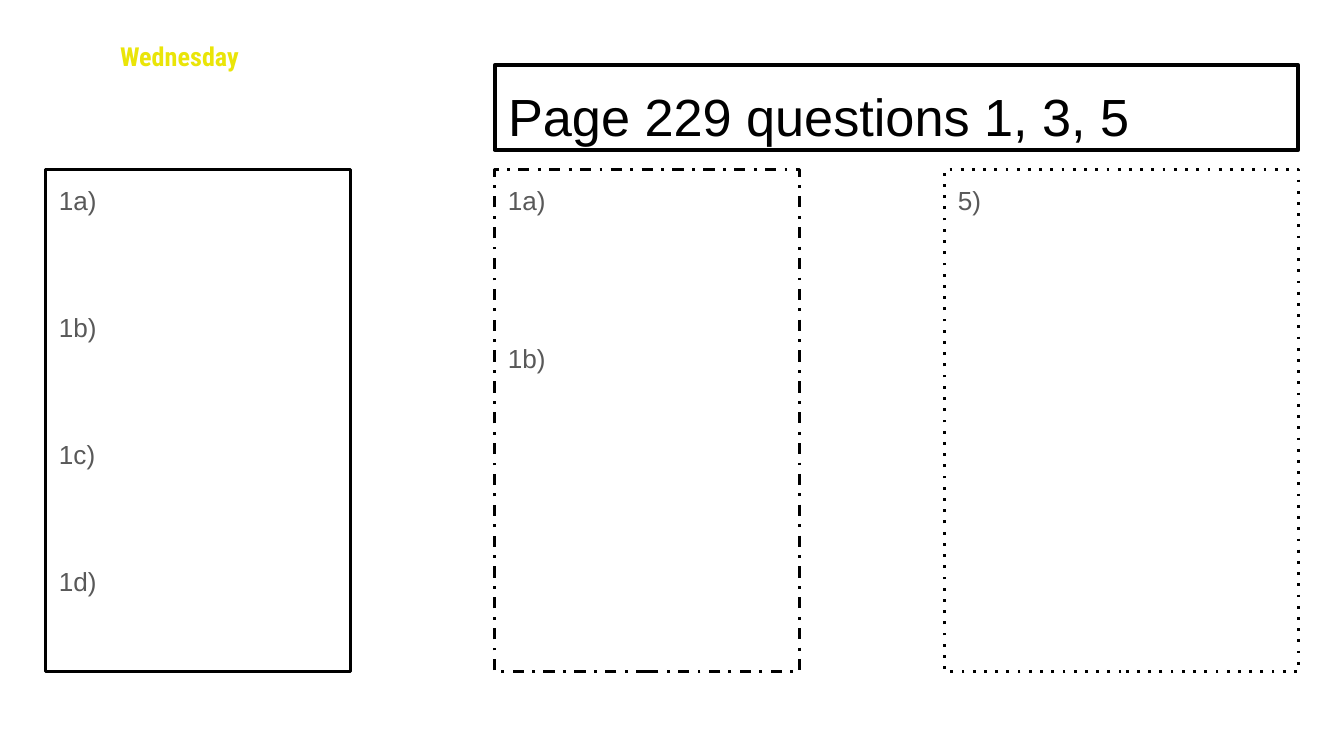
from dataclasses import dataclass

from lxml import etree
from pptx import Presentation
from pptx.dml.color import RGBColor
from pptx.enum.dml import MSO_LINE
from pptx.enum.shapes import MSO_SHAPE
from pptx.enum.text import MSO_ANCHOR, MSO_AUTO_SIZE, PP_ALIGN
from pptx.oxml.ns import qn
from pptx.util import Pt

RECT = MSO_SHAPE.RECTANGLE
SOLID = MSO_LINE.SOLID
TOP = MSO_ANCHOR.TOP
FIXED = MSO_AUTO_SIZE.NONE
LEFT, CENTER = PP_ALIGN.LEFT, PP_ALIGN.CENTER


@dataclass(frozen=True)
class Theme:
    font: str = "Arial"
    day_font: str = "Roboto Condensed"
    ink: str = "000000"
    gray: str = "595959"
    day: str = "EAE508"
    day_edge: str = "BFB50A"
    title: float = 28
    body: float = 14
    inset: float = 7.2


THEME = Theme()
TOP_Y, BOX_H = 90.7, 269.2
ROW = 16.8

# left, width, dash, lines from one label to the next, labels
BOXES = [
    (24.5, 163.5, "solid", 4, ["1a)", "1b)", "1c)", "1d)"]),
    (265, 163.5, "dashDot", 5, ["1a)", "1b)"]),
    (506, 189.5, "dot", 1, ["5)"]),
]


def place(shape, left, top, width, height):
    shape.left, shape.top = Pt(left), Pt(top)
    shape.width, shape.height = Pt(width), Pt(height)


def border(shape, width, dash="solid"):
    """Draw a black outline; dash is a preset dash name of DrawingML."""
    shape.fill.background()
    shape.line.color.rgb = RGBColor.from_string(THEME.ink)
    shape.line.width = Pt(width)
    shape.line.dash_style = SOLID
    shape.element.spPr.find(".//" + qn("a:prstDash")).set("val", dash)


def frame(shape):
    text = shape.text_frame
    text.word_wrap = True
    text.auto_size = FIXED
    text.vertical_anchor = TOP
    text.margin_left = text.margin_right = Pt(THEME.inset)
    text.margin_top = text.margin_bottom = Pt(THEME.inset)
    return text


def write(para, words, size, color, font=THEME.font, align=LEFT):
    para.alignment = align
    run = para.add_run()
    run.text = words
    run.font.name = font
    run.font.size = Pt(size)
    run.font.color.rgb = RGBColor.from_string(color)
    return run


def add_title(slide, words):
    title = slide.shapes.title
    place(title, 265, 35, 430.5, 45.3)
    border(title, 2.25)
    para = frame(title).paragraphs[0]
    para.line_spacing = 1.08
    write(para, words, THEME.title, THEME.ink)


def add_box(slide, left, width, dash, step, labels):
    box = slide.shapes.add_shape(
        RECT, Pt(left), Pt(TOP_Y), Pt(width), Pt(BOX_H))
    box.shadow.inherit = False
    border(box, 1.5, dash)
    text = frame(box)
    for i, label in enumerate(labels):
        para = text.add_paragraph() if i else text.paragraphs[0]
        para.line_spacing = 1.05
        para.space_before = Pt((step - 1) * ROW if i else 0)
        write(para, label, THEME.body, THEME.gray)


def add_day(slide, words):
    box = slide.shapes.add_textbox(Pt(24.5), Pt(18), Pt(143.3), Pt(53.3))
    text = frame(box)
    text.margin_top = Pt(3.6)
    run = write(text.paragraphs[0], words, THEME.body, THEME.day,
                THEME.day_font, CENTER)
    run.font.bold = True
    edge = etree.Element(qn("a:ln"), w=str(Pt(0.75)))
    fill = etree.SubElement(edge, qn("a:solidFill"))
    etree.SubElement(fill, qn("a:srgbClr"), val=THEME.day_edge)
    run.font._element.insert(0, edge)


def main():
    deck = Presentation()
    deck.slide_width, deck.slide_height = Pt(720), Pt(405)
    slide = deck.slides.add_slide(deck.slide_layouts[5])
    add_title(slide, "Page 229 questions 1, 3, 5")
    for box in BOXES:
        add_box(slide, *box)
    add_day(slide, "Wednesday")
    deck.save("out.pptx")


if __name__ == "__main__":
    main()
